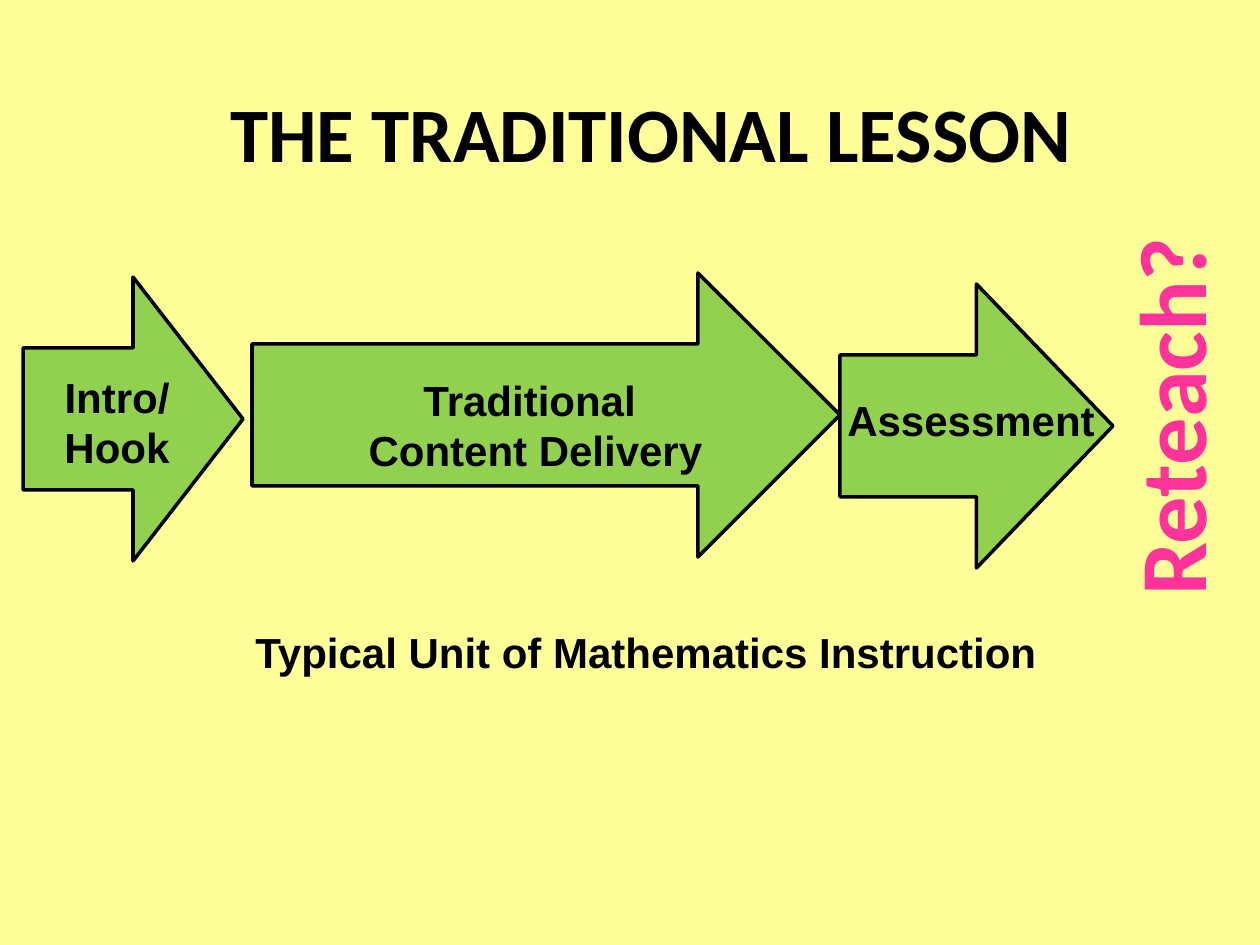
from pptx import Presentation
from pptx.dml.color import RGBColor
from pptx.enum.shapes import MSO_SHAPE
from pptx.enum.text import MSO_ANCHOR, MSO_AUTO_SIZE, PP_ALIGN
from pptx.util import Emu, Pt

PX_PER_INCH = 126
COLORS = {
    "background": "FFFF99",
    "arrow": "92D050",
    "ink": "000000",
    "accent": "FF3399",
}
ARROWS = [
    (23, 277, 220, 284),
    (252, 273, 588, 284),
    (840, 284, 273, 284),
]
LABELS = [
    ("Typical Unit of Mathematics Instruction", (210, 620, 872, 63)),
    ("Intro/\nHook", (25, 365, 184, 115)),
    ("Traditional \nContent Delivery", (315, 368, 441, 113)),
    ("Assessment", (829, 388, 284, 63)),
]


def px(length):
    """Turn a length in px into EMU."""
    return Emu(round(length * 914400 / PX_PER_INCH))


def color(name):
    """Look up a named colour."""
    return RGBColor.from_string(COLORS[name])


def write_text(frame, text, size, font, ink="ink"):
    """Fill a text frame with bold, centred paragraphs."""
    frame.text = text
    for para in frame.paragraphs:
        para.alignment = PP_ALIGN.CENTER
        para.font.size = Pt(size)
        para.font.name = font
        para.font.bold = True
        para.font.color.rgb = color(ink)


def set_title(page, text, bounds):
    """Move and format the title placeholder."""
    title = page.shapes.title
    title.left, title.top, title.width, title.height = map(px, bounds)
    title.text_frame.vertical_anchor = MSO_ANCHOR.MIDDLE
    write_text(title.text_frame, text, 44, "Calibri")


def add_arrow(page, bounds):
    """Add a block arrow for one stage of the lesson."""
    arrow = page.shapes.add_shape(MSO_SHAPE.RIGHT_ARROW, *map(px, bounds))
    arrow.shadow.inherit = False
    arrow.fill.solid()
    arrow.fill.fore_color.rgb = color("arrow")
    arrow.line.color.rgb = color("ink")
    arrow.line.width = Pt(2)


def add_label(page, text, bounds, size=24, font="Arial", ink="ink", wrap=True):
    """Add a text box that grows with its text."""
    box = page.shapes.add_textbox(*map(px, bounds))
    box.text_frame.word_wrap = wrap
    box.text_frame.auto_size = MSO_AUTO_SIZE.SHAPE_TO_FIT_TEXT
    write_text(box.text_frame, text, size, font, ink)
    return box


def main():
    """Build the lesson slide and save it."""
    deck = Presentation()
    deck.slide_width, deck.slide_height = px(1260), px(945)
    page = deck.slides.add_slide(deck.slide_layouts[5])
    page.background.fill.solid()
    page.background.fill.fore_color.rgb = color("background")

    set_title(page, "THE TRADITIONAL LESSON", (116, 53, 1071, 158))
    for bounds in ARROWS:
        add_arrow(page, bounds)
    for text, bounds in LABELS:
        add_label(page, text, bounds)
    reteach = add_label(page, "Reteach?", (942, 353, 455, 127), 54, "Calibri", "accent", False)
    reteach.rotation = 270

    deck.save("out.pptx")


if __name__ == "__main__":
    main()
